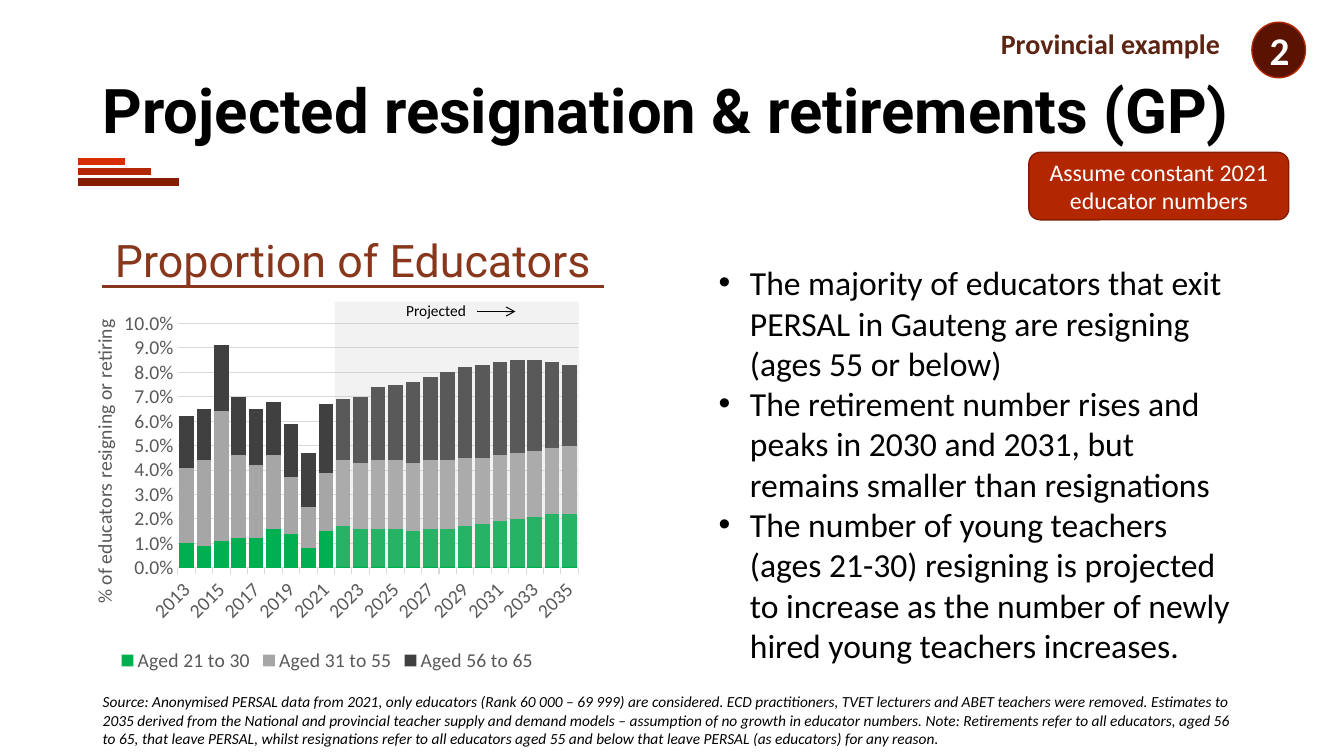
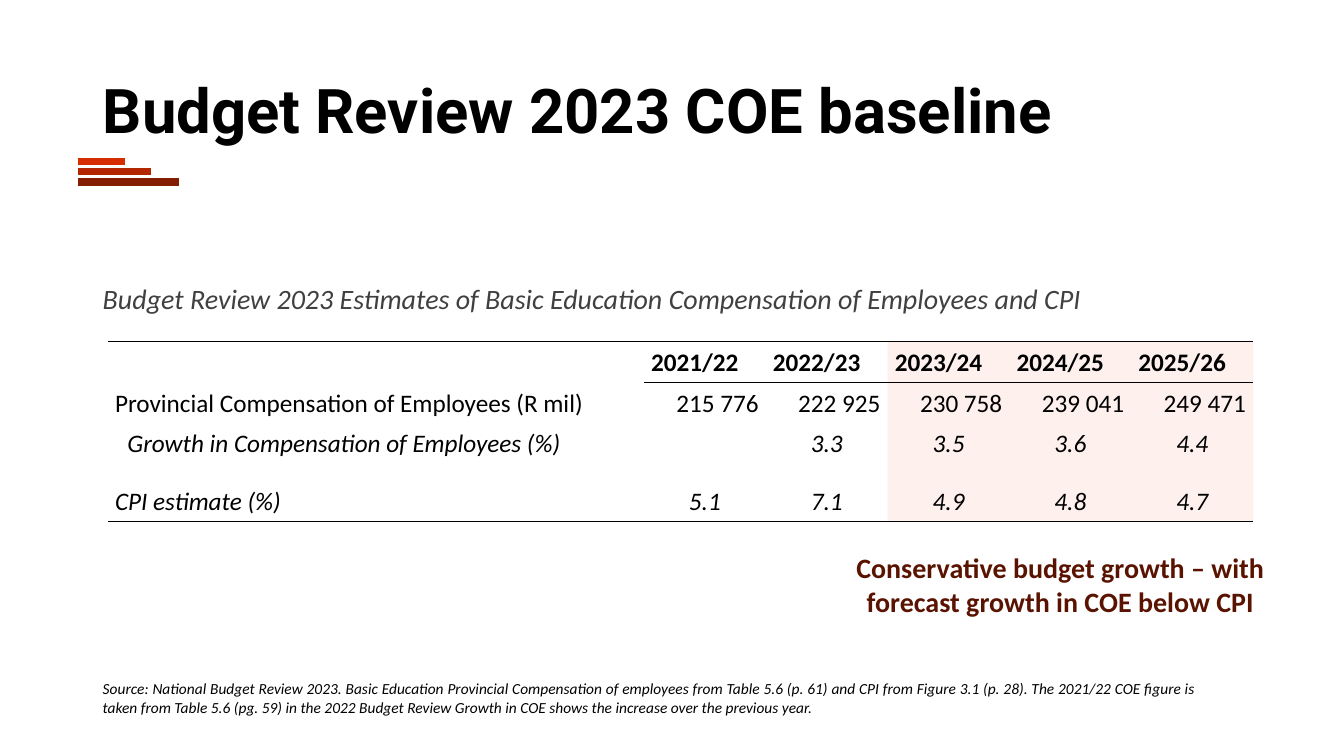
from lxml import etree
from pptx import Presentation
from pptx.chart.data import CategoryChartData
from pptx.dml.color import RGBColor
from pptx.enum.chart import XL_CHART_TYPE, XL_LEGEND_POSITION, XL_TICK_MARK
from pptx.enum.shapes import MSO_CONNECTOR, MSO_SHAPE
from pptx.enum.text import MSO_ANCHOR, PP_ALIGN
from pptx.oxml import parse_xml
from pptx.oxml.ns import nsdecls, qn
from pptx.util import Cm, Pt

LEFT, MID, RIGHT, JUST = PP_ALIGN.LEFT, PP_ALIGN.CENTER, PP_ALIGN.RIGHT, PP_ALIGN.JUSTIFY
TOP, CENTRE = MSO_ANCHOR.TOP, MSO_ANCHOR.MIDDLE
RECT, ROUND, OVAL = MSO_SHAPE.RECTANGLE, MSO_SHAPE.ROUNDED_RECTANGLE, MSO_SHAPE.OVAL
STACKED = XL_CHART_TYPE.COLUMN_STACKED
BOTTOM = XL_LEGEND_POSITION.BOTTOM
NO_TICK, OUT_TICK = XL_TICK_MARK.NONE, XL_TICK_MARK.OUTSIDE

BODY, HEAD = "Calibri", "Roboto"
BLACK, WHITE, GREY, PALE = "000000", "FFFFFF", "595959", "D9D9D9"
MAROON, RED, BROWN = "591300", "B22600", "88371D"
NO_GRID = "{2D5ABB26-0587-4C30-8999-92F81FD0307C}"

YEARS = [str(year) for year in range(2013, 2036)]
AGES = [
    ("Aged 21 to 30", "00B050",
     (0.01, 0.009, 0.011, 0.012, 0.012, 0.016, 0.014, 0.008, 0.015, 0.017, 0.016, 0.016,
      0.016, 0.015, 0.016, 0.016, 0.017, 0.018, 0.019, 0.02, 0.021, 0.022, 0.022)),
    ("Aged 31 to 55", "A6A6A6",
     (0.031, 0.035, 0.053, 0.034, 0.03, 0.03, 0.023, 0.017, 0.024, 0.027, 0.027, 0.028,
      0.028, 0.028, 0.028, 0.028, 0.028, 0.027, 0.027, 0.027, 0.027, 0.027, 0.028)),
    ("Aged 56 to 65", "404040",
     (0.021, 0.021, 0.027, 0.024, 0.023, 0.022, 0.022, 0.022, 0.028, 0.025, 0.027, 0.03,
      0.031, 0.033, 0.034, 0.036, 0.037, 0.038, 0.038, 0.038, 0.037, 0.035, 0.033)),
]
POINTS = [
    "The majority of educators that exit PERSAL in Gauteng are resigning (ages 55 or below)",
    "The retirement number rises and peaks in 2030 and 2031, but remains smaller than "
    "resignations",
    "The number of young teachers (ages 21-30) resigning is projected to increase as the "
    "number of newly hired young teachers increases.",
]
SOURCE_EXITS = (
    "Source: Anonymised PERSAL data from 2021, only educators (Rank 60 000 – 69 999) are "
    "considered. ECD practitioners, TVET lecturers and ABET teachers were removed. Estimates "
    "to 2035 derived from the National and provincial teacher supply and demand models – "
    "assumption of no growth in educator numbers. Note: Retirements refer to all educators, "
    "aged 56 to 65, that leave PERSAL, whilst resignations refer to all educators aged 55 and "
    "below that leave PERSAL (as educators) for any reason."
)
SOURCE_BUDGET = (
    "Source: National Budget Review 2023. Basic Education Provincial Compensation of employees "
    "from Table 5.6 (p. 61) and CPI from Figure 3.1 (p. 28). The 2021/22 COE figure is taken "
    "from Table 5.6 (pg. 59) in the 2022 Budget Review Growth in COE shows the increase over "
    "the previous year."
)
ROWS = [
    ("", "2021/22", "2022/23", "2023/24", "2024/25", "2025/26"),
    ("Provincial Compensation of Employees (R mil)",
     "215 776", "222 925", "230 758", "239 041", "249 471"),
    ("Growth in Compensation of Employees (%)", "", "3.3", "3.5", "3.6", "4.4"),
    ("",) * 6,
    ("CPI estimate (%)", "5.1", "7.1", "4.9", "4.8", "4.7"),
]


def rgb(code):
    return RGBColor.from_string(code)


def style(font, size, color=BLACK, face=BODY, bold=False, italic=False):
    font.size, font.name, font.bold, font.italic = Pt(size), face, bold, italic
    font.color.rgb = rgb(color)


def write(frame, lines, size, align=LEFT, anchor=TOP, **look):
    """Fill a text frame with one paragraph for each line."""
    frame.word_wrap = True
    frame.vertical_anchor = anchor
    for i, line in enumerate(lines):
        par = frame.add_paragraph() if i else frame.paragraphs[0]
        par.text = line
        par.alignment = align
        style(par.font, size, **look)


def label(slide, box, lines, size, **look):
    area = slide.shapes.add_textbox(*map(Cm, box))
    write(area.text_frame, lines, size, **look)
    return area.text_frame


def block(slide, kind, box, fill, edge=None, alpha=None):
    """Draw a filled shape; alpha is its opacity in percent."""
    shape = slide.shapes.add_shape(kind, *map(Cm, box))
    shape.shadow.inherit = False
    shape.fill.solid()
    shape.fill.fore_color.rgb = rgb(fill)
    if alpha:
        tint = next(shape._element.spPr.iter(qn("a:srgbClr")))
        etree.SubElement(tint, qn("a:alpha"), val=str(alpha * 1000))
    if edge:
        shape.line.color.rgb = rgb(edge)
        shape.line.width = Pt(1)
    else:
        shape.line.fill.background()
    return shape


def rule(slide, x, y, width, color, weight, arrow=False):
    line = slide.shapes.add_connector(
        MSO_CONNECTOR.STRAIGHT, Cm(x), Cm(y), Cm(x + width), Cm(y))
    line.line.color.rgb = rgb(color)
    line.line.width = Pt(weight)
    if arrow:
        etree.SubElement(line.line._get_or_add_ln(), qn("a:tailEnd"), type="arrow")
    etree.SubElement(line._element.spPr, qn("a:effectLst"))


def base(deck, title):
    """Add a slide with the shared title and its three stripes."""
    slide = deck.slides.add_slide(deck.slide_layouts[6])
    stripes = [("D62E00", 1.19), (RED, 1.85), ("851D00", 2.54)]
    for i, (color, width) in enumerate(stripes):
        rule(slide, 1.96, 4.07 + i * 0.255, width, color, 5.5)
    frame = label(slide, (2.34, 1.02, 29.21, 3.68), [title], 44,
                  anchor=CENTRE, face=HEAD, bold=True)
    frame.paragraphs[0].line_spacing = 0.9
    return slide


def place(parent, x, y, size=None):
    """Set a chart part's layout in shares of the chart."""
    old = parent.find(qn("c:layout"))
    if old is not None:
        parent.remove(old)
    marks = [("xMode", "edge"), ("yMode", "edge"), ("x", x), ("y", y)]
    if size:
        marks.insert(0, ("layoutTarget", "inner"))
        marks += [("w", size[0]), ("h", size[1])]
    body = "".join(f'<c:{tag} val="{val}"/>' for tag, val in marks)
    spot = parse_xml(f'<c:layout {nsdecls("c")}><c:manualLayout>{body}'
                     "</c:manualLayout></c:layout>")
    text = parent.find(qn("c:tx"))
    parent.insert(0 if text is None else 1, spot)


def graph(slide, box):
    data = CategoryChartData(number_format="0.0%")
    data.categories = YEARS
    for name, _, vals in AGES:
        data.add_series(name, vals)
    chart = slide.shapes.add_chart(STACKED, *map(Cm, box), data).chart
    chart.has_title = False
    style(chart.font, 14)
    chart.has_legend = True
    chart.legend.position = BOTTOM
    chart.legend.include_in_layout = False
    style(chart.legend.font, 14, GREY)

    plot = chart.plots[0]
    plot.gap_width, plot.overlap, plot.vary_by_categories = 20, 100, False
    for bar, (_, color, _) in zip(plot.series, AGES):
        bar.format.fill.solid()
        bar.format.fill.fore_color.rgb = rgb(color)

    years, share = chart.category_axis, chart.value_axis
    for axis in (years, share):
        style(axis.tick_labels.font, 14, GREY)
    years.major_tick_mark = OUT_TICK
    years.format.line.color.rgb = rgb(PALE)
    years._element.find(qn("c:txPr")).find(qn("a:bodyPr")).set("rot", "-2700000")
    skip = parse_xml(f'<c:tickLblSkip {nsdecls("c")} val="2"/>')
    years._element.find(qn("c:noMultiLvlLbl")).addprevious(skip)

    share.minimum_scale, share.maximum_scale, share.major_unit = 0, 0.1, 0.01
    share.major_tick_mark = NO_TICK
    share.format.line.fill.background()
    share.major_gridlines.format.line.color.rgb = rgb(PALE)
    share.tick_labels.number_format = "0.0%"
    share.tick_labels.number_format_is_linked = False
    frame = share.axis_title.text_frame
    frame.text = "% of educators resigning or retiring"
    style(frame.paragraphs[0].runs[0].font, 14, GREY)
    frame._txBody.find(qn("a:bodyPr")).set("rot", "-5400000")
    place(share.axis_title._element, 0.05, 0.07)
    place(chart._chartSpace.chart.plotArea, 0.22, 0.09, (0.75, 0.63))


def panel(slide, x, y, width):
    """Place the headed chart and the shade over its projected years."""
    rule(slide, x, y + 1.4, width, BROWN, 2.25)
    label(slide, (x, y, width, 1.45), ["Proportion of Educators"], 32,
          align=MID, anchor=CENTRE, face=HEAD, color=BROWN)
    graph(slide, (x - 1.05, y + 1.45, 13.46, 9.78))
    shade = block(slide, RECT, (x + 5.87, y + 1.78, 6.15, 6.68), "BFBFBF", alpha=20)
    frame = shade.text_frame
    write(frame, ["Projected"], 11, align=MID)
    frame.margin_top = frame.margin_bottom = 0
    frame.margin_right = Cm(1.3)
    rule(slide, x + 9.45, y + 2.03, 0.97, BLACK, 0.75, arrow=True)


def bullets(slide, box):
    frame = label(slide, box, POINTS, 24)
    for par in frame.paragraphs:
        props = par._p.get_or_add_pPr()
        props.set("marL", str(Cm(0.79)))
        props.set("indent", str(-Cm(0.79)))
        mark = parse_xml(f'<a:buChar {nsdecls("a")} char="•"/>')
        face = parse_xml(f'<a:buFont {nsdecls("a")} typeface="Arial"/>')
        props.insert(0, mark)
        props.insert(0, face)


def border(cell, sides):
    props = cell._tc.get_or_add_tcPr()
    for i, side in enumerate(sides):
        props.insert(i, parse_xml(
            f'<a:ln{side} {nsdecls("a")} w="12700"><a:solidFill>'
            f'<a:srgbClr val="{BLACK}"/></a:solidFill></a:ln{side}>'))


def grid(slide, x, y):
    """Place the budget table over a tint behind the forecast years."""
    first, other, high, gap = 13.51, 3.07, 1.02, 0.45
    width, height = first + 5 * other, 4 * high + gap
    block(slide, RECT, (x + first + 2 * other, y, 3 * other, height), "FADBD3", alpha=40)
    table = slide.shapes.add_table(
        len(ROWS), 6, Cm(x), Cm(y), Cm(width), Cm(height)).table
    table.first_row = table.horz_banding = False
    next(table._tbl.iter(qn("a:tableStyleId"))).text = NO_GRID
    for c, col in enumerate(table.columns):
        col.width = Cm(other if c else first)
    aligns = (JUST, RIGHT, MID, MID, MID)
    for r, row in enumerate(ROWS):
        table.rows[r].height = Cm(high if any(row) else gap)
        for c, text in enumerate(row):
            cell = table.cell(r, c)
            cell.fill.background()
            cell.vertical_anchor = CENTRE
            cell.margin_left = Cm(0.49 if (r, c) == (2, 0) else 0.18)
            cell.margin_right = Cm(0.18)
            cell.margin_top = cell.margin_bottom = 0
            par = cell.text_frame.paragraphs[0]
            if text:
                par.text = text
                par.alignment = aligns[r] if c else JUST
                par.line_spacing = 1.07
                style(par.font, 18, bold=r == 0, italic=r > 1)
            else:
                etree.SubElement(par._p, qn("a:endParaRPr"), sz="600")
            if r == 0:
                border(cell, "TB" if c else "T")
            elif r == len(ROWS) - 1:
                border(cell, "B")


def exits(deck):
    slide = base(deck, "Projected resignation & retirements (GP)")
    panel(slide, 2.57, 5.82, 12.65)
    note = block(slide, ROUND, (25.93, 3.84, 6.55, 1.7), RED, "841C00")
    write(note.text_frame, ["Assume constant 2021 educator numbers"], 17,
          align=MID, anchor=CENTRE, color=WHITE)
    bullets(slide, (17.86, 6.48, 13.69, 10.39))
    badge = block(slide, OVAL, (31.55, 0.56, 1.35, 1.4), MAROON, RED)
    write(badge.text_frame, ["2"], 28, align=MID, anchor=CENTRE, color=WHITE, bold=True)
    label(slide, (24.71, 0.56, 6.55, 1.07), ["Provincial example"], 20,
          align=MID, anchor=CENTRE, color="5B2413", bold=True)
    label(slide, (2.34, 17.32, 29.21, 1.45), [SOURCE_EXITS], 11, italic=True)


def budget(deck):
    slide = base(deck, "Budget Review 2023 COE baseline")
    label(slide, (2.34, 6.96, 26, 1.12),
          ["Budget Review 2023 Estimates of Basic Education Compensation of Employees and CPI"],
          20, align=JUST, anchor=CENTRE, color="404040", italic=True)
    grid(slide, 2.72, 8.61)
    label(slide, (20.93, 13.41, 11.58, 2.62),
          ["Conservative budget growth – with forecast growth in COE below CPI"],
          20, align=MID, anchor=CENTRE, color=MAROON, bold=True)
    label(slide, (2.34, 16.99, 28.07, 1.19), [SOURCE_BUDGET], 11,
          align=JUST, anchor=CENTRE, italic=True)


def main():
    deck = Presentation()
    deck.slide_width, deck.slide_height = Cm(33.87), Cm(19.05)
    exits(deck)
    budget(deck)
    deck.save("out.pptx")


if __name__ == "__main__":
    main()
